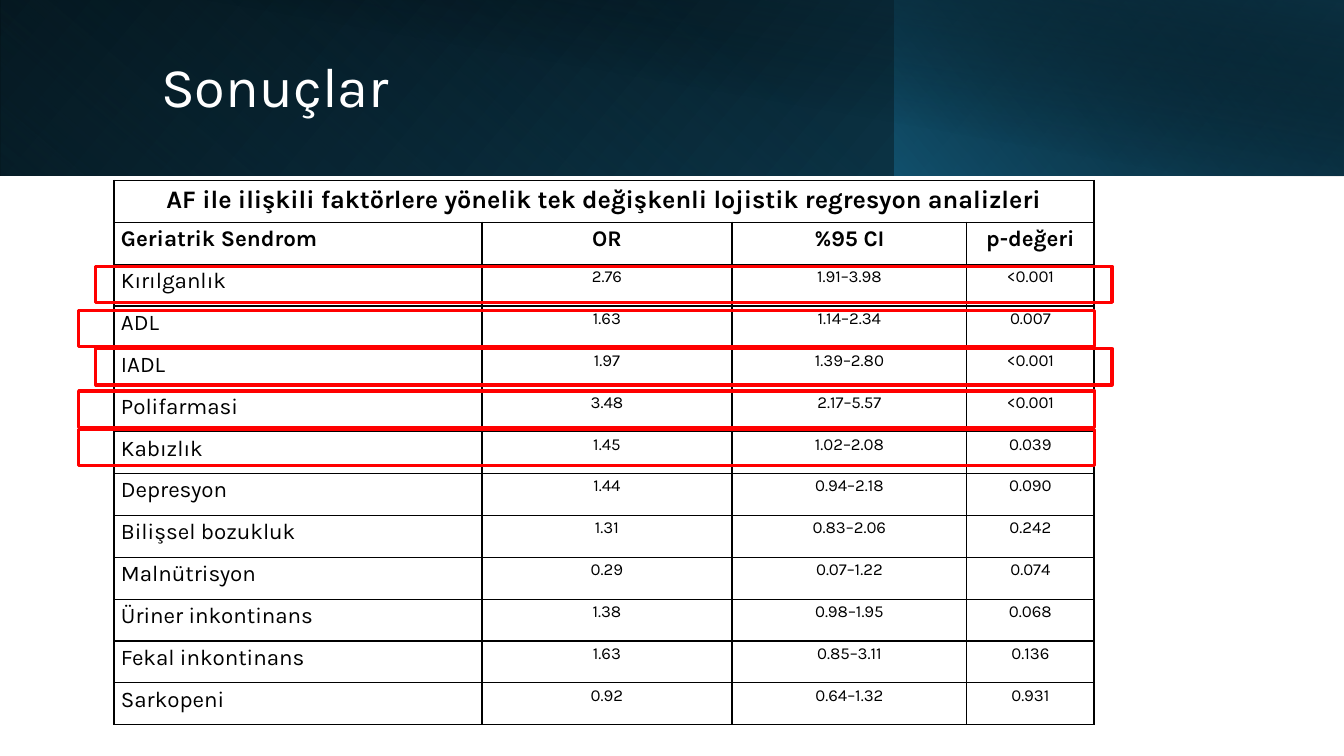
import pptx
import pptx.chart.data
import pptx.dml.color
import pptx.enum.shapes
import pptx.enum.text
import pptx.oxml
import pptx.oxml.ns
import pptx.util

WIDE, HIGH = 13.33, 7.5
FONT = "Karla"
HUES = {"ink": "000000", "paper": "FFFFFF", "mark": "FF0000",
        "sea": "104862", "teal": "156082", "navy": "0B3041"}
SPACE = pptx.oxml.ns.nsdecls("a")
ALIGN = pptx.enum.text.PP_ALIGN

BANDS = [
    ((0, 0, WIDE, 1.74), 0, 140, [(0, "ink", 100), (100, "sea", 100)], True),
    ((0, 0, 8.88, 1.74), 180, 230, [(20, "teal", 0), (100, "navy", 55)], True),
    ((8.87, 0, 4.46, 1.74), 0, 220, [(0, "teal", 66), (100, "ink", 30)], True),
    ((0.5, 0, 12.83, 1.75), 0, 280, [(50, "ink", 0), (99, "navy", 52)], False),
]
HEADING = "AF ile ilişkili faktörlere yönelik tek değişkenli lojistik regresyon analizleri"
LABELS = ("Geriatrik Sendrom", "OR", "%95 CI", "p-değeri")
DATA = [
    ("Kırılganlık", "2.76", "1.91–3.98", "<0.001"),
    ("ADL", "1.63", "1.14–2.34", "0.007"),
    ("IADL", "1.97", "1.39–2.80", "<0.001"),
    ("Polifarmasi", "3.48", "2.17–5.57", "<0.001"),
    ("Kabızlık", "1.45", "1.02–2.08", "0.039"),
    ("Depresyon", "1.44", "0.94–2.18", "0.090"),
    ("Bilişsel bozukluk", "1.31", "0.83–2.06", "0.242"),
    ("Malnütrisyon", "0.29", "0.07–1.22", "0.074"),
    ("Üriner inkontinans", "1.38", "0.98–1.95", "0.068"),
    ("Fekal inkontinans", "1.63", "0.85–3.11", "0.136"),
    ("Sarkopeni", "0.92", "0.64–1.32", "0.931"),
]
COLS = (3.65, 2.48, 2.33, 1.26)
MARKS = [(-0.18, 0.85), (-0.35, 1.29), (-0.18, 1.67), (-0.35, 2.09), (-0.35, 2.47)]


def inches(*sizes):
    """Turn lengths in inches into slide units."""
    return [pptx.util.Inches(size) for size in sizes]


def color(name):
    """Look up a named colour."""
    return pptx.dml.color.RGBColor.from_string(HUES[name])


def write(para, text, size, hue, bold=False):
    """Add one styled run to a paragraph."""
    run = para.add_run()
    run.text = text
    run.font.name, run.font.size, run.font.bold = FONT, pptx.util.Pt(size), bold
    run.font.color.rgb = color(hue)


def block(slide, box):
    """Add a plain rectangle without a shadow."""
    shape = slide.shapes.add_shape(pptx.enum.shapes.MSO_SHAPE.RECTANGLE, *inches(*box))
    shape.shadow.inherit = False
    return shape


def shade(shape, angle, stops):
    """Fill a shape with a gradient of see-through stops."""
    marks = "".join(
        f'<a:gs pos="{pos * 1000}"><a:srgbClr val="{HUES[hue]}">'
        f'<a:alpha val="{alpha * 1000}"/></a:srgbClr></a:gs>'
        for pos, hue, alpha in stops)
    fill = pptx.oxml.parse_xml(
        f'<a:gradFill {SPACE} rotWithShape="1"><a:gsLst>{marks}</a:gsLst>'
        f'<a:lin ang="{angle * 60000}" scaled="0"/></a:gradFill>')
    shape.element.spPr.find(pptx.oxml.ns.qn("a:prstGeom")).addnext(fill)


def header(slide, box):
    """Draw the layered banner and its title in the box."""
    left, top, width, height = box
    for (x, y, wide, high), turn, angle, stops, flip in BANDS:
        band = block(slide, (left + x, top + y, wide, high))
        band.rotation = turn
        band.line.fill.background()
        shade(band, angle, stops)
        if flip:
            band.element.spPr.find(pptx.oxml.ns.qn("a:xfrm")).set("flipH", "1")
    title = slide.shapes.add_textbox(*inches(left + 1.5, top + 0.32, width - 2.51, height - 0.62))
    frame = title.text_frame
    frame.word_wrap = True
    frame.vertical_anchor = pptx.enum.text.MSO_ANCHOR.MIDDLE
    frame.paragraphs[0].line_spacing = 0.9
    write(frame.paragraphs[0], "Sonuçlar", 40, "paper")


def border(cell):
    """Outline every side of a table cell."""
    for side in "LRTB":
        cell._tc.get_or_add_tcPr().append(pptx.oxml.parse_xml(
            f'<a:ln{side} {SPACE} w="12700"><a:solidFill>'
            f'<a:srgbClr val="{HUES["ink"]}"/></a:solidFill></a:ln{side}>'))


def style(cell):
    """Set the frame, fill and margins of a table cell."""
    border(cell)
    cell.fill.background()
    cell.margin_left = cell.margin_right = pptx.util.Inches(0.07)
    cell.margin_top = cell.margin_bottom = 0


def results(slide, box):
    """Build the regression table in the box."""
    rows = [(HEADING,), LABELS] + DATA
    table = slide.shapes.add_table(len(rows), len(COLS), *inches(*box)).table
    table.first_row = table.horz_banding = False
    for col, share in zip(table.columns, COLS):
        col.width = pptx.util.Inches(box[2] * share / sum(COLS))
    for row in table.rows:
        row.height = pptx.util.Inches(box[3] / len(rows))
    for cell in table.iter_cells():
        style(cell)
    table.cell(0, 0).merge(table.cell(0, len(COLS) - 1))
    for i, texts in enumerate(rows):
        for j, text in enumerate(texts):
            para = table.cell(i, j).text_frame.paragraphs[0]
            para.alignment = ALIGN.LEFT if i and not j else ALIGN.CENTER
            para.line_spacing, para.space_after = 1.15, pptx.util.Pt(10)
            size = 18 if i == 0 else 12 if i > 1 and j else 16
            write(para, text, size, "ink", i < 2)


def frames(slide, box):
    """Outline the significant rows of the table in the box."""
    for shift, drop in MARKS:
        mark = block(slide, (box[0] + shift, box[1] + drop, box[2] + 0.36, 0.36))
        mark.fill.background()
        mark.line.color.rgb = color("mark")
        mark.line.width = pptx.util.Pt(2.25)


def main():
    """Build and save the slide."""
    deck = pptx.Presentation()
    deck.slide_width, deck.slide_height = inches(WIDE, HIGH)
    slide = deck.slides.add_slide(deck.slide_layouts[6])
    grid = (1.13, 1.79, 9.72, 5.4)
    header(slide, (0, 0, WIDE, 1.75))
    results(slide, grid)
    frames(slide, grid)
    deck.save("out.pptx")


if __name__ == "__main__":
    main()
